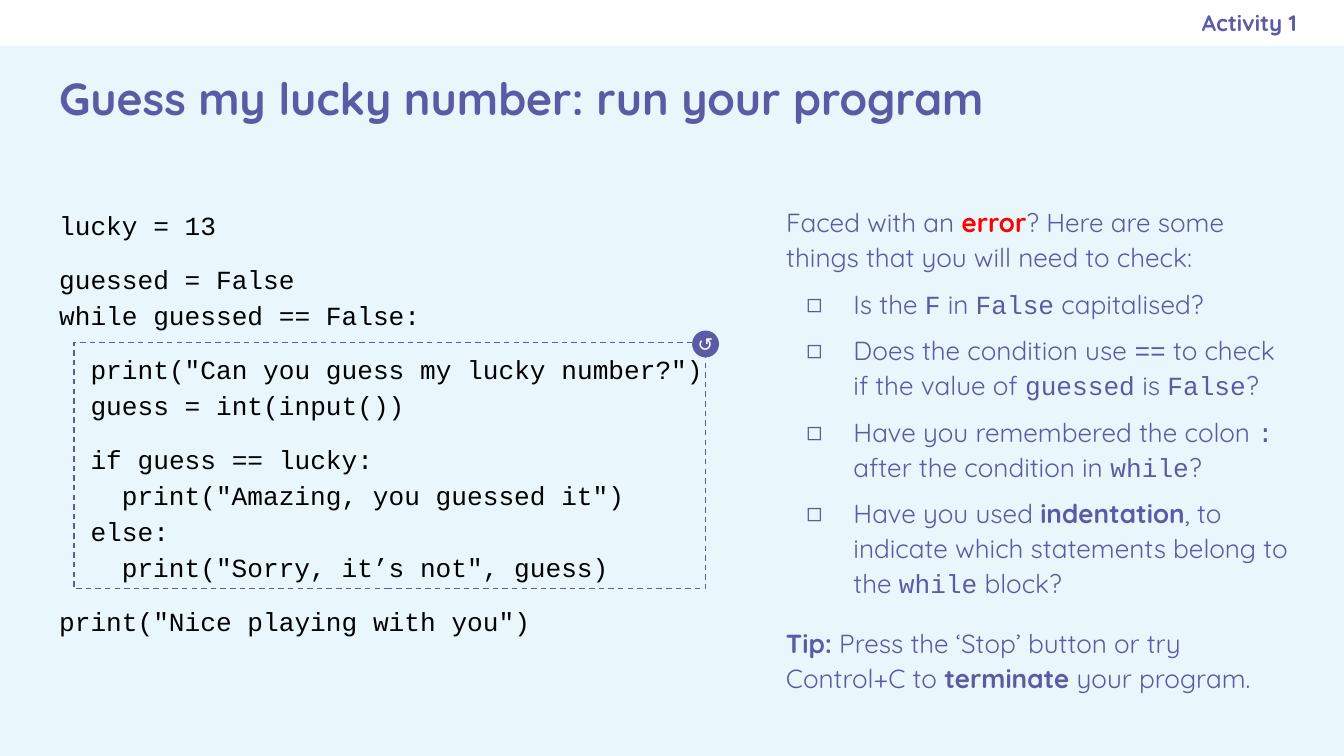
from lxml.etree import SubElement
from pptx import Presentation
from pptx.dml.color import RGBColor
from pptx.enum.dml import MSO_LINE
from pptx.enum.shapes import MSO_SHAPE
from pptx.enum.text import MSO_ANCHOR, MSO_AUTO_SIZE, PP_ALIGN
from pptx.oxml.ns import qn
from pptx.util import Pt

PURPLE = RGBColor(0x5B, 0x5B, 0xA5)
PALE_BLUE = RGBColor(0xE9, 0xF7, 0xFC)
WHITE = RGBColor(0xFF, 0xFF, 0xFF)
BLACK = RGBColor(0, 0, 0)
RED = RGBColor(0xFF, 0, 0)
TEXT_FONT = "Quicksand"
CODE_FONT = "Courier New"
CODE_CHARACTER = 8.4

CODE_LINES = [
    (0, 0, "lucky = 13"),
    (0, 10, "guessed = False"),
    (0, 0, "while guessed == False:"),
    (2, 10, 'print("Can you guess my lucky number?")'),
    (2, 0, "guess = int(input())"),
    (2, 10, "if guess == lucky:"),
    (4, 0, 'print("Amazing, you guessed it")'),
    (2, 0, "else:"),
    (4, 0, 'print("Sorry, it’s not", guess)'),
    (0, 10, 'print("Nice playing with you")'),
]
INTRODUCTION = [("Faced with an ", ""), ("error", "alert"),
                ("? Here are some things that you will need to check:", "")]
CHECKS = [
    [("Is the ", ""), ("F", "code"), (" in ", ""), ("False", "code"), (" capitalised?", "")],
    [("Does the condition use ", ""), ("==", "code"), (" to check if the value of ", ""),
     ("guessed", "code"), (" is ", ""), ("False", "code"), ("?", "")],
    [("Have you remembered the colon ", ""), (":", "code"),
     (" after the condition in ", ""), ("while", "code"), ("?", "")],
    [("Have you used ", ""), ("indentation", "bold"),
     (", to indicate which statements belong to the ", ""), ("while", "code"), (" block?", "")],
]
TIP = [("Tip:", "bold"), (" Press the ‘Stop’ button or try Control+C to ", ""),
       ("terminate", "bold"), (" your program.", "")]


def place(shape, box):
    """Move and size a shape to a box of left, top, width and height in points."""
    shape.left, shape.top, shape.width, shape.height = (Pt(length) for length in box)


def prepare_frame(shape, anchor=MSO_ANCHOR.TOP, right=7.2):
    """Set wrapping, margins and anchor, and return the text frame."""
    frame = shape.text_frame
    frame.word_wrap = True
    frame.auto_size = MSO_AUTO_SIZE.NONE
    frame.vertical_anchor = anchor
    frame.margin_left = frame.margin_top = frame.margin_bottom = Pt(7.2)
    frame.margin_right = Pt(right)
    return frame


def add_paragraph(frame, runs, size=14, font=TEXT_FONT, color=PURPLE, bold=False,
                  align=PP_ALIGN.LEFT, spacing=1.0, before=0, margin=0, bullet=None):
    """Write styled runs as the next paragraph of a text frame."""
    paragraph = frame.paragraphs[0]
    if paragraph.runs:
        paragraph = frame.add_paragraph()
    paragraph.alignment = align
    paragraph.line_spacing = spacing
    paragraph.space_before = Pt(before)
    paragraph.space_after = Pt(0)
    properties = paragraph._p.get_or_add_pPr()
    properties.set("marL", str(Pt(margin)))
    properties.set("indent", str(Pt(-25.2 if bullet else 0)))
    if bullet:
        bullet_color = SubElement(properties, qn("a:buClr"))
        SubElement(bullet_color, qn("a:srgbClr"), val=str(color))
        SubElement(properties, qn("a:buFont"), typeface=TEXT_FONT)
        SubElement(properties, qn("a:buChar"), char=bullet)
    else:
        SubElement(properties, qn("a:buNone"))
    paragraph.font.name = font
    paragraph.font.size = Pt(size)
    paragraph.font.bold = bold
    paragraph.font.color.rgb = color
    for text, style in runs:
        run = paragraph.add_run()
        run.text = text
        if style == "code":
            run.font.name = CODE_FONT
        if style in ("bold", "alert"):
            run.font.bold = True
        if style == "alert":
            run.font.color.rgb = RED


def add_plain_shape(slide, kind, box, fill=None):
    """Add a preset shape without shadow or outline."""
    shape = slide.shapes.add_shape(kind, *(Pt(length) for length in box))
    shape.shadow.inherit = False
    shape.line.fill.background()
    if fill is None:
        shape.fill.background()
    else:
        shape.fill.solid()
        shape.fill.fore_color.rgb = fill
    return shape


def add_header(slide, box):
    """Draw the white band with the activity label at its right."""
    left, top, width, height = box
    add_plain_shape(slide, MSO_SHAPE.RECTANGLE, box, WHITE)
    label_box = (left + width - 306, top, 280.8, height)
    label = slide.shapes.add_textbox(*(Pt(length) for length in label_box))
    frame = prepare_frame(label, MSO_ANCHOR.MIDDLE, right=0)
    add_paragraph(frame, [("Activity 1", "")], size=12, bold=True, align=PP_ALIGN.RIGHT)


def add_title(slide, box):
    """Fill the title placeholder."""
    title = slide.shapes.title
    place(title, box)
    frame = prepare_frame(title, MSO_ANCHOR.MIDDLE)
    add_paragraph(frame, [("Guess my lucky number: run your program", "")], size=24, bold=True)


def add_program(slide, placeholder, box):
    """Write the program and outline the body of its loop."""
    left, top, width, height = box
    place(placeholder, box)
    frame = prepare_frame(placeholder)
    for level, before, text in CODE_LINES:
        add_paragraph(frame, [(text, "")], font=CODE_FONT, color=BLACK, spacing=1.14,
                      before=before, margin=level * CODE_CHARACTER)
    loop_left, loop_top, loop_width = left + 15.1, top + 81.2, 338.4
    outline = add_plain_shape(slide, MSO_SHAPE.RECTANGLE,
                              (loop_left, loop_top, loop_width, 131.8))
    outline.line.color.rgb = PURPLE
    outline.line.width = Pt(0.75)
    outline.line.dash_style = MSO_LINE.DASH
    diameter = 14.4
    badge = add_plain_shape(slide, MSO_SHAPE.OVAL,
                            (loop_left + loop_width - diameter / 2,
                             loop_top + 0.7 - diameter / 2, diameter, diameter), PURPLE)
    frame = prepare_frame(badge, MSO_ANCHOR.MIDDLE, right=0)
    frame.margin_left = frame.margin_top = frame.margin_bottom = 0
    add_paragraph(frame, [("↺", "")], size=10, color=WHITE, align=PP_ALIGN.CENTER)


def add_checklist(slide, placeholder, box):
    """Write the list of checks and the tip below it."""
    left, top, width, height = box
    place(placeholder, box)
    frame = prepare_frame(placeholder, right=4.3)
    add_paragraph(frame, INTRODUCTION, spacing=1.12)
    for check in CHECKS:
        add_paragraph(frame, check, spacing=1.12, before=6, margin=36, bullet="◻")
    tip_box = (left, top + 225.4, width, 55.4)
    tip = slide.shapes.add_textbox(*(Pt(length) for length in tip_box))
    add_paragraph(prepare_frame(tip, right=4.3), TIP, spacing=1.12)


def main():
    """Build and save the presentation."""
    presentation = Presentation()
    presentation.slide_width, presentation.slide_height = Pt(720), Pt(405)
    slide = presentation.slides.add_slide(presentation.slide_layouts[3])
    slide.background.fill.solid()
    slide.background.fill.fore_color.rgb = PALE_BLUE
    add_header(slide, (0, 0, 720, 24.5))
    add_title(slide, (24.5, 24.5, 671, 55.4))
    add_program(slide, slide.placeholders[1], (24.5, 102.4, 368.6, 249.1))
    add_checklist(slide, slide.placeholders[2], (414, 101.5, 280.8, 239))
    presentation.save("out.pptx")


if __name__ == "__main__":
    main()
